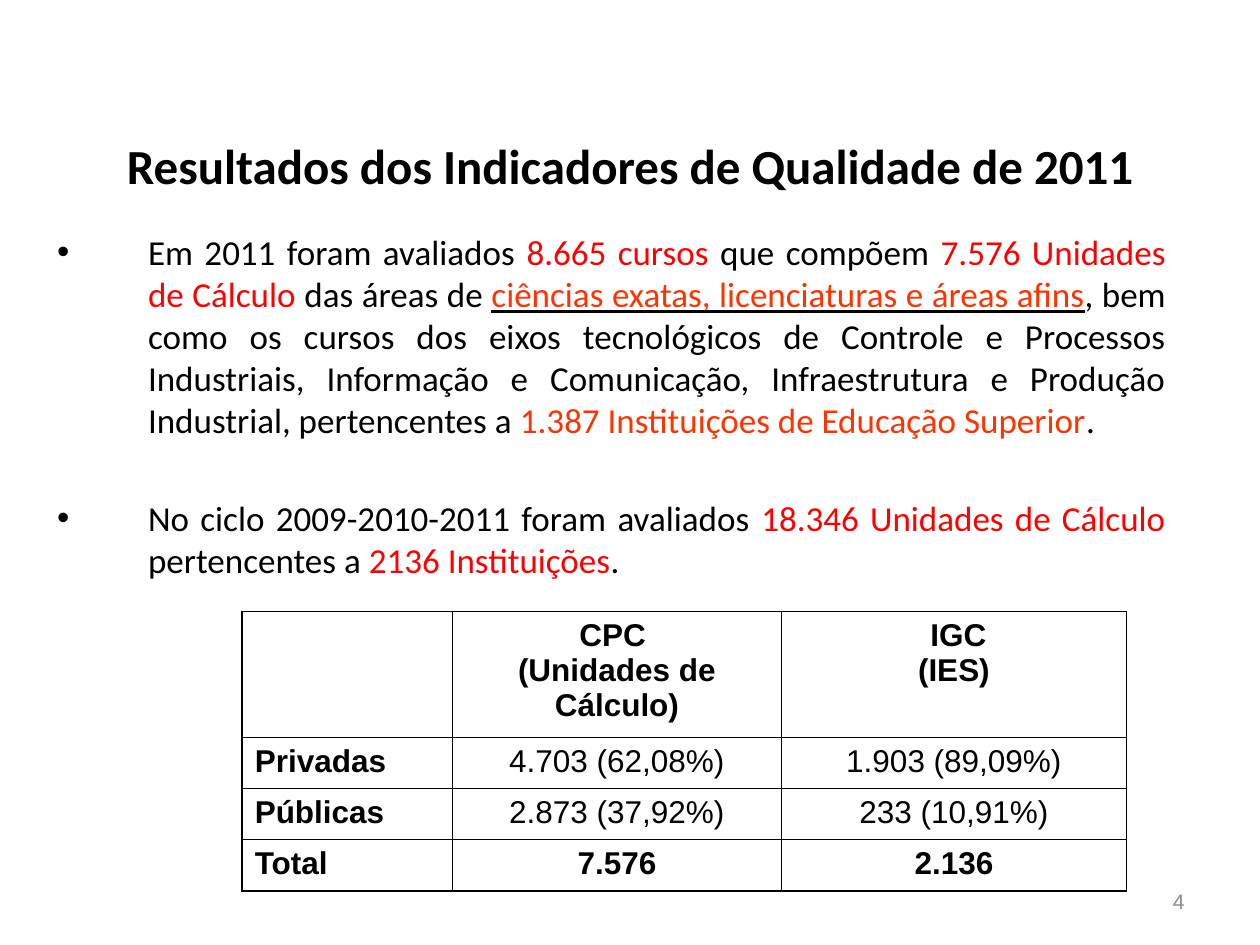
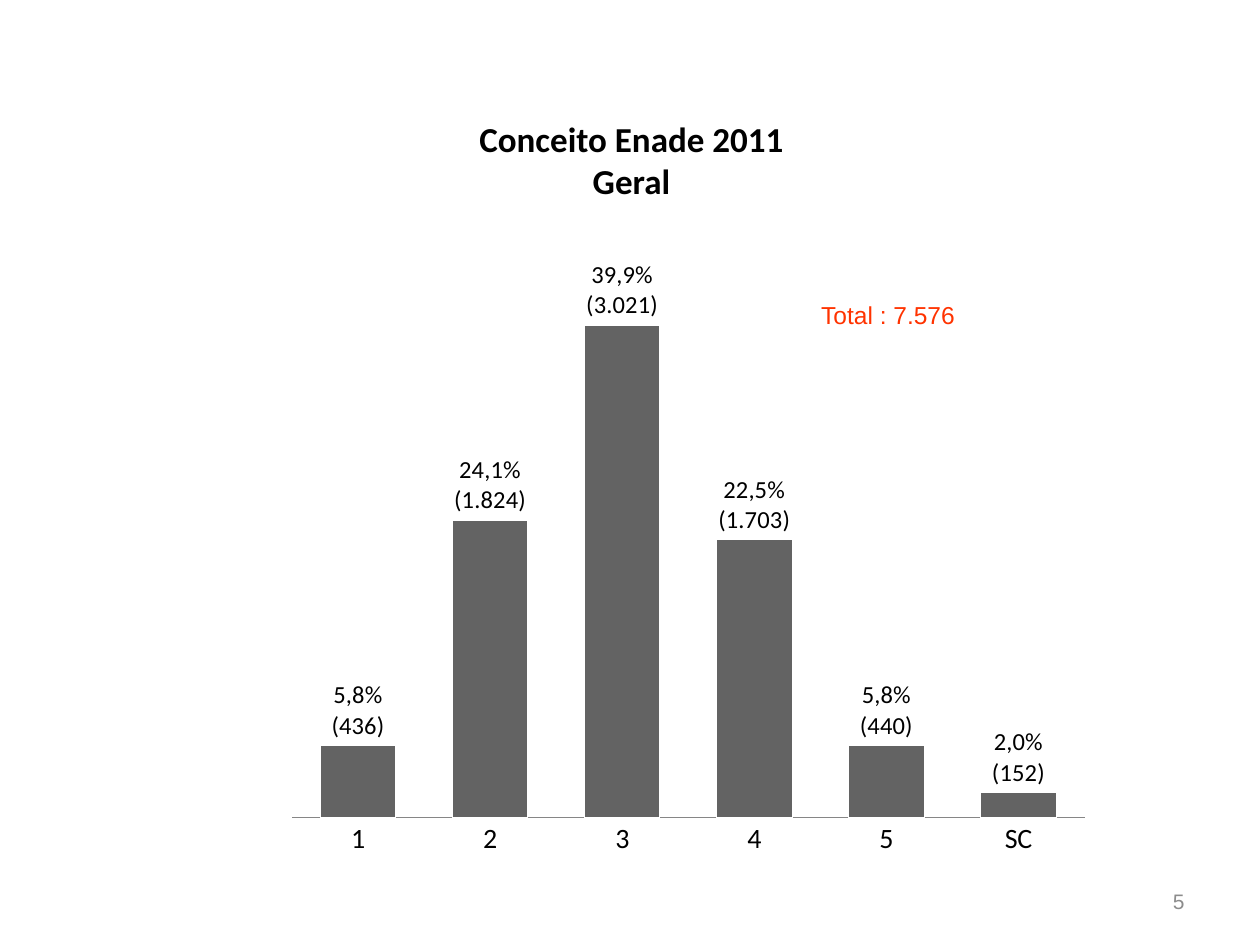
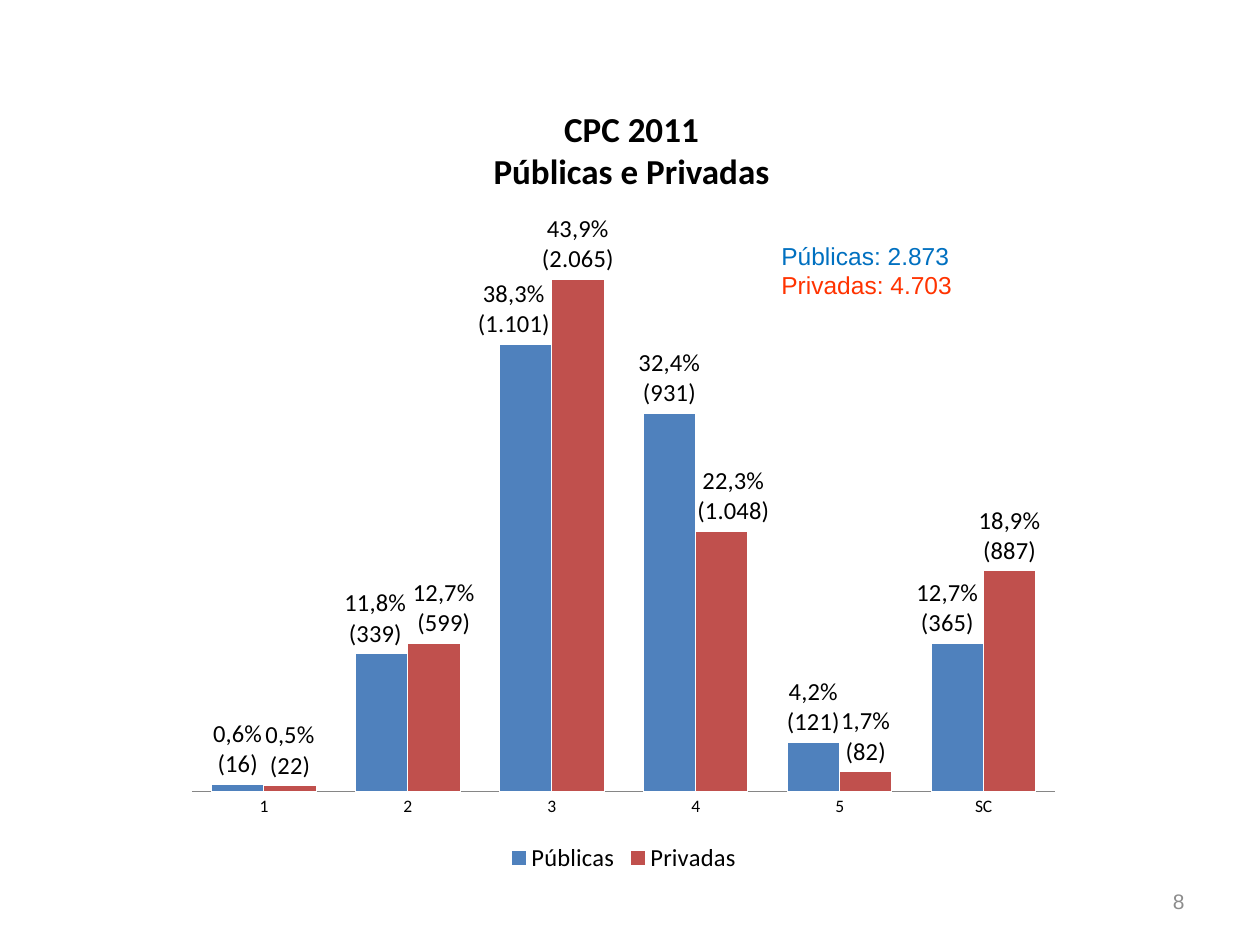
from dataclasses import dataclass, field

from lxml import etree
from pptx import Presentation
from pptx.chart.data import CategoryChartData
from pptx.dml.color import RGBColor
from pptx.enum.chart import (XL_CHART_TYPE, XL_LABEL_POSITION,
                             XL_LEGEND_POSITION, XL_TICK_MARK)
from pptx.enum.text import MSO_ANCHOR, MSO_AUTO_SIZE, PP_ALIGN
from pptx.oxml import parse_xml
from pptx.oxml.ns import nsdecls, qn
from pptx.util import Pt

LEFT, CENTER, RIGHT, JUSTIFY = (PP_ALIGN.LEFT, PP_ALIGN.CENTER,
                                PP_ALIGN.RIGHT, PP_ALIGN.JUSTIFY)
MIDDLE = MSO_ANCHOR.MIDDLE
NO_AUTOFIT = MSO_AUTO_SIZE.NONE
COLUMNS = XL_CHART_TYPE.COLUMN_CLUSTERED
OUTSIDE_END = XL_LABEL_POSITION.OUTSIDE_END
NO_TICKS = XL_TICK_MARK.NONE
LEGEND_BOTTOM = XL_LEGEND_POSITION.BOTTOM

COLORS = {
    "text": "000000", "white": "FFFFFF", "red": "FF0000", "orange": "FF3300",
    "number": "8C8C8C", "axis": "868686", "all": "636363",
    "public": "4F81BD", "private": "C0504D", "public_total": "0070C0",
}
HEADING_FONT, PLAIN_FONT = "Calibri", "Arial"
LAYOUT_CONTENT, LAYOUT_TITLE_ONLY = 1, 5
GRADES = ["1", "2", "3", "4", "5", "SC"]
PERCENT = "0.0%"


@dataclass
class Box:
    left: float
    top: float
    width: float
    height: float

    def points(self) -> tuple:
        return Pt(self.left), Pt(self.top), Pt(self.width), Pt(self.height)


@dataclass
class Span:
    text: str
    color: str = "text"
    underline: bool = False


@dataclass
class GradeSeries:
    name: str
    color: str
    shares: list[float]
    counts: list[str]
    shifts: dict[int, float] = field(default_factory=dict)


@dataclass
class GradeChart:
    box: Box
    plot: tuple[float, float, float, float]
    maximum: float
    size: float
    series: list[GradeSeries]
    legend: bool = False


NUMBER_BOX = Box(516, 500.4, 168, 28.8)


# Shared helpers
def rgb(name: str) -> RGBColor:
    return RGBColor.from_string(COLORS[name])


def style_font(font, size: float, name: str = PLAIN_FONT,
               color: str = "text", bold: bool = False) -> None:
    font.name, font.size, font.bold = name, Pt(size), bold
    font.color.rgb = rgb(color)


def place(shape, box: Box) -> None:
    shape.left, shape.top, shape.width, shape.height = box.points()


def add_text(slide, box: Box, lines: list[Span], size: float,
             align=LEFT, wrap: bool = True):
    frame = slide.shapes.add_textbox(*box.points()).text_frame
    frame.word_wrap = wrap
    frame.text = "\n".join(line.text for line in lines)
    for paragraph, line in zip(frame.paragraphs, lines):
        paragraph.alignment = align
        style_font(paragraph.font, size, color=line.color)
    return frame


def add_slide(deck, layout: int, title: str, box: Box, size: float, number: int):
    slide = deck.slides.add_slide(deck.slide_layouts[layout])
    heading = slide.shapes.title
    place(heading, box)
    frame = heading.text_frame
    frame.auto_size = NO_AUTOFIT
    frame.vertical_anchor = MIDDLE
    frame.text = title
    frame.paragraphs[0].alignment = CENTER
    style_font(frame.paragraphs[0].font, size, HEADING_FONT, bold=True)
    add_text(slide, NUMBER_BOX, [Span(str(number), "number")], 12,
             RIGHT).vertical_anchor = MIDDLE
    return slide


# Bulleted list
def fill_list(body, box: Box, items: list[list[Span]], gap: float) -> None:
    place(body, box)
    frame = body.text_frame
    frame.auto_size = NO_AUTOFIT
    for index, spans in enumerate(items):
        paragraph = frame.add_paragraph() if index else frame.paragraphs[0]
        paragraph.alignment = JUSTIFY
        paragraph.space_before = Pt(gap if index else 0)
        properties = paragraph._p.get_or_add_pPr()
        properties.set("marL", str(Pt(52)))
        properties.set("indent", str(Pt(-52)))
        etree.SubElement(properties, qn("a:buChar"), char="•")
        paragraph.font.name, paragraph.font.size = HEADING_FONT, Pt(20)
        for span in spans:
            run = paragraph.add_run()
            run.text = span.text
            run.font.color.rgb = rgb(span.color)
            if span.underline:
                run.font.underline = True
                run._r.get_or_add_rPr().append(parse_xml(
                    f'<a:uFill {nsdecls("a")}><a:solidFill><a:srgbClr '
                    f'val="{COLORS["text"]}"/></a:solidFill></a:uFill>'))


# Table
def draw_borders(cell) -> None:
    properties = cell._tc.get_or_add_tcPr()
    for index, side in enumerate(("lnL", "lnR", "lnT", "lnB")):
        properties.insert(index, parse_xml(
            f'<a:{side} {nsdecls("a")} w="{Pt(1)}"><a:solidFill><a:srgbClr '
            f'val="{COLORS["text"]}"/></a:solidFill></a:{side}>'))


def add_grid(slide, box: Box, widths: list[float], row_height: float,
             rows: list[list[str]]) -> None:
    table = slide.shapes.add_table(len(rows), len(widths), *box.points()).table
    table.first_row = table.horz_banding = False
    for column, width in zip(table.columns, widths):
        column.width = Pt(width)
    for row in table.rows:
        row.height = Pt(row_height)
    for r, texts in enumerate(rows):
        for c, text in enumerate(texts):
            cell = table.cell(r, c)
            cell.fill.background()
            draw_borders(cell)
            cell.text = text
            for paragraph in cell.text_frame.paragraphs:
                paragraph.alignment = CENTER if c else LEFT
                style_font(paragraph.font, 18,
                           bold=c == 0 or r in (0, len(rows) - 1))


# Column charts
def set_plot_area(chart, plot: tuple[float, float, float, float]) -> None:
    area = chart._chartSpace.chart.plotArea
    for old in area.findall(qn("c:layout")):
        area.remove(old)
    sizes = "".join(f'<c:{key} val="{value}"/>' for key, value in zip("xywh", plot))
    area.insert(0, parse_xml(
        f'<c:layout {nsdecls("c")}><c:manualLayout><c:layoutTarget val="inner"/>'
        f'<c:xMode val="edge"/><c:yMode val="edge"/>{sizes}'
        '</c:manualLayout></c:layout>'))


def label_point(point, share: float, count: str, shift: float) -> None:
    label = point.data_label
    percent = f"{share:.1%}".replace(".", ",")
    label.text_frame.text = f"{percent}\n({count})"
    for paragraph in label.text_frame.paragraphs:
        for run in paragraph.runs:
            style_font(run.font, 14, HEADING_FONT)
    label.position = OUTSIDE_END
    if shift:
        element = label._get_or_add_dLbl()
        element.insert(1, parse_xml(
            f'<c:layout {nsdecls("c")}><c:manualLayout><c:x val="{shift}"/>'
            '<c:y val="0"/></c:manualLayout></c:layout>'))


def label_series(drawn, series: GradeSeries) -> None:
    labels = drawn.data_labels
    labels.show_value = True
    labels.number_format, labels.number_format_is_linked = PERCENT, False
    labels.position = OUTSIDE_END
    style_font(labels.font, 14, HEADING_FONT)
    for index, (share, count) in enumerate(zip(series.shares, series.counts)):
        label_point(drawn.points[index], share, count,
                    series.shifts.get(index, 0))


def add_grade_chart(slide, design: GradeChart) -> None:
    data = CategoryChartData(number_format=PERCENT)
    data.categories = GRADES
    for series in design.series:
        data.add_series(series.name, series.shares)
    chart = slide.shapes.add_chart(COLUMNS, *design.box.points(), data).chart
    style_font(chart.font, design.size, HEADING_FONT)
    chart.has_title = False
    chart.has_legend = design.legend
    if design.legend:
        chart.legend.position = LEGEND_BOTTOM
        chart.legend.include_in_layout = False
        style_font(chart.legend.font, 14, HEADING_FONT)
    set_plot_area(chart, design.plot)

    grades, shares = chart.category_axis, chart.value_axis
    grades.major_tick_mark = NO_TICKS
    grades.format.line.color.rgb = rgb("axis")
    shares.visible = shares.has_major_gridlines = False
    shares.minimum_scale, shares.maximum_scale = 0, design.maximum
    shares.tick_labels.number_format = PERCENT
    shares.tick_labels.number_format_is_linked = False

    plot = chart.plots[0]
    plot.gap_width, plot.overlap, plot.vary_by_categories = 75, 0, False
    for drawn, series in zip(plot.series, design.series):
        drawn.format.fill.solid()
        drawn.format.fill.fore_color.rgb = rgb(series.color)
        drawn.format.line.color.rgb = rgb("white")
        label_series(drawn, series)


# Content
FINDINGS = [
    [Span("Em 2011 foram avaliados "), Span("8.665 cursos ", "red"),
     Span("que compõem "), Span("7.576 Unidades de Cálculo", "red"),
     Span(" das áreas de "),
     Span("ciências exatas, licenciaturas e áreas afins", "orange", True),
     Span(", bem como os cursos dos eixos tecnológicos de Controle e Processos "
          "Industriais, Informação e Comunicação, Infraestrutura e Produção "
          "Industrial, pertencentes a "),
     Span("1.387 Instituições de Educação Superior", "orange"), Span(".")],
    [Span("No ciclo 2009-2010-2011 foram avaliados "),
     Span("18.346 Unidades de Cálculo ", "red"), Span("pertencentes a "),
     Span("2136 Instituições", "red"), Span(".")],
]
EVALUATED = [
    ["", "CPC \n(Unidades de Cálculo)", " IGC\n(IES)"],
    ["Privadas", "4.703 (62,08%)", "1.903 (89,09%)"],
    ["Públicas", "2.873 (37,92%)", "233 (10,91%)"],
    ["Total", "7.576", "2.136"],
]
ENADE = GradeChart(
    Box(87.8, 105.4, 553, 417.6), (0.143, 0.107, 0.819, 0.759), 0.45, 16,
    [GradeSeries("Series 1", "all", [0.058, 0.241, 0.399, 0.225, 0.058, 0.02],
                 ["436", "1.824", "3.021", "1.703", "440", "152"])])
CPC = GradeChart(
    Box(99.4, 111, 514, 391), (0.02, 0.02, 0.96, 0.853), 0.5, 10,
    [GradeSeries("Públicas", "public", [0.006, 0.118, 0.383, 0.324, 0.042, 0.127],
                 ["16", "339", "1.101", "931", "121", "365"],
                 {1: -0.007, 2: -0.013, 5: -0.011}),
     GradeSeries("Privadas", "private", [0.005, 0.127, 0.439, 0.223, 0.017, 0.189],
                 ["22", "599", "2.065", "1.048", "82", "887"],
                 {1: 0.011, 3: 0.013})],
    legend=True)


def main() -> None:
    deck = Presentation()
    deck.slide_width, deck.slide_height = Pt(720), Pt(540)

    # Quality indicators
    results = add_slide(deck, LAYOUT_CONTENT,
                        "Resultados dos Indicadores de Qualidade de 2011",
                        Box(36, 54.7, 648, 79.2), 28, 4)
    fill_list(results.placeholders[1], Box(25.4, 128.2, 648, 368.6), FINDINGS, 32)
    add_grid(results, Box(138.4, 349.4, 505.4, 116.8), [120.2, 187.9, 197.3],
             29.2, EVALUATED)

    # Enade grades
    enade = add_slide(deck, LAYOUT_TITLE_ONLY, "Conceito Enade 2011\vGeral",
                      Box(36.9, 54.7, 648, 73.4), 20, 5)
    add_grade_chart(enade, ENADE)
    add_text(enade, Box(462.2, 167.8, 91.4, 24.5),
             [Span("Total : 7.576", "orange")], 14, wrap=False)

    # CPC grades by sector
    cpc = add_slide(deck, LAYOUT_TITLE_ONLY, "CPC 2011\vPúblicas e Privadas",
                    Box(36.9, 54.4, 648, 62.2), 20, 8)
    add_grade_chart(cpc, CPC)
    add_text(cpc, Box(439.4, 134.2, 193, 41),
             [Span("Públicas: 2.873", "public_total"),
              Span("Privadas: 4.703", "orange")], 14)

    deck.save("out.pptx")


if __name__ == "__main__":
    main()
